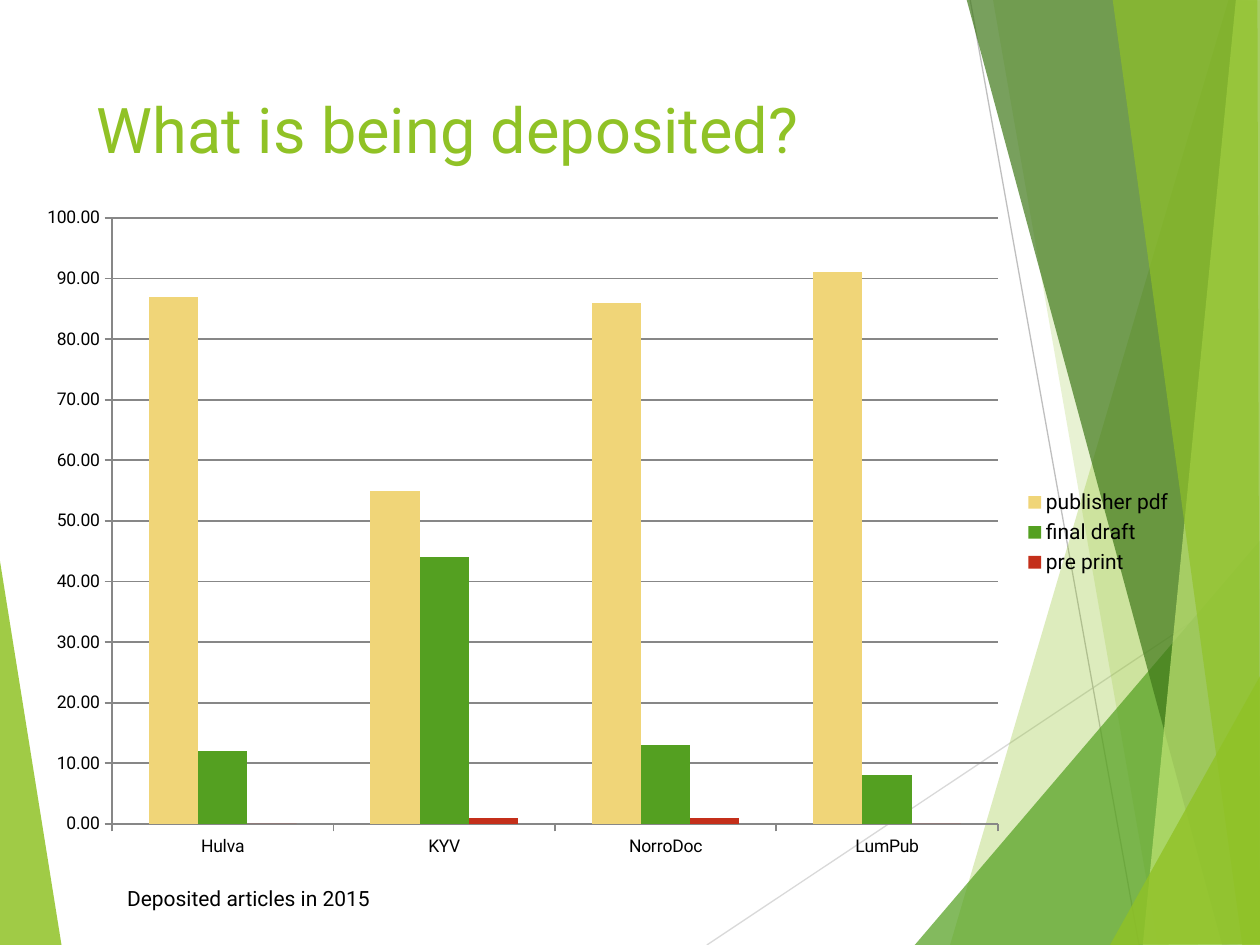
from lxml import etree
from pptx import Presentation
from pptx.chart.data import CategoryChartData
from pptx.dml.color import RGBColor
from pptx.enum.chart import XL_CHART_TYPE, XL_LEGEND_POSITION, XL_TICK_MARK
from pptx.enum.shapes import MSO_CONNECTOR
from pptx.enum.text import MSO_ANCHOR, MSO_AUTO_SIZE
from pptx.oxml.ns import qn
from pptx.util import Inches, Pt

COLUMN = XL_CHART_TYPE.COLUMN_CLUSTERED
LEGEND_RIGHT = XL_LEGEND_POSITION.RIGHT
TICK_OUT = XL_TICK_MARK.OUTSIDE
STRAIGHT = MSO_CONNECTOR.STRAIGHT
TOP = MSO_ANCHOR.TOP
FIT_SHAPE = MSO_AUTO_SIZE.SHAPE_TO_FIT_TEXT

FONT = "Roboto"
COLORS = {
    "lime": "90C226", "green": "54A021", "forest": "3F7819", "pale": "C0E474",
    "sand": "F0D578", "red": "C42F1A", "black": "000000", "axis": "878787",
    "light_line": "D9D9D9", "dark_line": "BFBFBF",
}

# Facets: colour, opacity in percent, corners in hundredths of an inch
LEFT_FACET = ("lime", 85, [(-1, 439), (49, 751), (-1, 750)])
RIGHT_FACETS = [
    ("lime", 30, [(975, 0), (754, 750), (1002, 751), (1001, 1)]),
    ("lime", 20, [(788, -1), (919, 750), (1001, 750), (1001, -1)]),
    ("green", 72, [(726, 750), (1000, 429), (1001, 750)]),
    ("forest", 70, [(767, -1), (970, 750), (1001, 749), (1001, -1)]),
    ("pale", 70, [(981, -1), (907, 750), (1001, 750), (1000, -1)]),
    ("lime", 65, [(883, -1), (986, 750), (1000, 750), (998, -1)]),
    ("lime", 80, [(881, 750), (1001, 535), (1001, 749)]),
]
LINES = [("light_line", 5.61, 7.5, 10.01, 4.57), ("dark_line", 7.7, 0, 9.04, 7.5)]

CATEGORIES = ["Hulva", "KYV", "NorroDoc", "LumPub"]
SERIES = [
    ("publisher pdf", "sand", (87, 55, 86, 91)),
    ("final draft", "green", (12, 44, 13, 8)),
    ("pre print", "red", (0, 1, 1, 0)),
]
# Plot area inside the chart box
PLOT_LEFT, PLOT_TOP = Inches(0.69), Inches(0.18)
PLOT_WIDTH, PLOT_HEIGHT = Inches(7.03), Inches(4.81)


def rgb(name):
    return RGBColor.from_string(COLORS[name])


def style_font(font, size, color):
    font.name, font.size = FONT, Pt(size)
    font.color.rgb = rgb(color)


def add_facet(s, left, top, color, opacity, points):
    fb = s.shapes.build_freeform(*points[0], scale=Inches(0.01))
    fb.add_line_segments(points[1:], close=True)
    sp = fb.convert_to_shape(left, top)
    sp.shadow.inherit = False
    sp.line.fill.background()
    sp.fill.solid()
    sp.fill.fore_color.rgb = rgb(color)
    clr = sp.fill._xPr.find(f".//{qn('a:srgbClr')}")
    etree.SubElement(clr, qn("a:alpha"), val=str(opacity * 1000))


def add_background(s, left, top):
    add_facet(s, left, top, *LEFT_FACET)
    for color, x1, y1, x2, y2 in LINES:
        line = s.shapes.add_connector(
            STRAIGHT, left + Inches(x1), top + Inches(y1),
            left + Inches(x2), top + Inches(y2))
        line.line.color.rgb = rgb(color)
        line.line.width = Pt(0.75)
        etree.SubElement(line._element.spPr, qn("a:effectLst"))
    for facet in RIGHT_FACETS:
        add_facet(s, left, top, *facet)


def add_text(s, box, text, size, color, wrap=True):
    tf = s.shapes.add_textbox(*box).text_frame
    tf.word_wrap = wrap
    tf.vertical_anchor = TOP
    if not wrap:
        tf.auto_size = FIT_SHAPE
    p = tf.paragraphs[0]
    p.text = text
    style_font(p.font, size, color)


def set_plot_layout(chart, width, height):
    area = chart._chartSpace.chart.plotArea
    for old in area.findall(qn("c:layout")):
        area.remove(old)
    layout = etree.Element(qn("c:layout"))
    area.insert(0, layout)
    manual = etree.SubElement(layout, qn("c:manualLayout"))
    settings = {
        "layoutTarget": "inner", "xMode": "edge", "yMode": "edge",
        "x": PLOT_LEFT / width, "y": PLOT_TOP / height,
        "w": PLOT_WIDTH / width, "h": PLOT_HEIGHT / height,
    }
    for tag, value in settings.items():
        etree.SubElement(manual, qn(f"c:{tag}"), val=str(value))


def add_deposit_chart(s, box):
    data = CategoryChartData(number_format="0.00")
    data.categories = CATEGORIES
    for name, _, values in SERIES:
        data.add_series(name, values)
    chart = s.shapes.add_chart(COLUMN, *box, data).chart
    chart.has_title = False
    style_font(chart.font, 10, "black")
    set_plot_layout(chart, *box[2:])

    # Columns
    plot = chart.plots[0]
    plot.gap_width, plot.overlap = 150, 0
    plot.vary_by_categories = False
    for series, (_, color, _) in zip(plot.series, SERIES):
        series.format.fill.solid()
        series.format.fill.fore_color.rgb = rgb(color)

    # Axes and gridlines
    values = chart.value_axis
    values.minimum_scale, values.maximum_scale, values.major_unit = 0, 100, 10
    values.tick_labels.number_format = "0.00"
    values.tick_labels.number_format_is_linked = False
    values.has_major_gridlines = True
    for axis in (chart.category_axis, values):
        axis.major_tick_mark = TICK_OUT
    for part in (chart.category_axis, values, values.major_gridlines):
        part.format.line.color.rgb = rgb("axis")
        part.format.line.width = Pt(1)

    # Legend
    chart.has_legend = True
    chart.legend.position = LEGEND_RIGHT
    chart.legend.include_in_layout = False
    style_font(chart.legend.font, 12, "black")


def main():
    prs = Presentation()
    prs.slide_width, prs.slide_height = Inches(10), Inches(7.5)
    s = prs.slides.add_slide(prs.slide_layouts[6])
    add_background(s, 0, 0)
    add_text(s, (Inches(0.67), Inches(0.67), Inches(6.94), Inches(1.44)),
             "What is being deposited?", 36, "lime")
    add_deposit_chart(s, (Inches(0.2), Inches(1.55), Inches(9.21), Inches(5.35)))
    add_text(s, (Inches(0.91), Inches(6.98), Inches(2.15), Inches(0.3)),
             "Deposited articles in 2015", 12, "black", wrap=False)
    prs.save("out.pptx")


if __name__ == "__main__":
    main()
